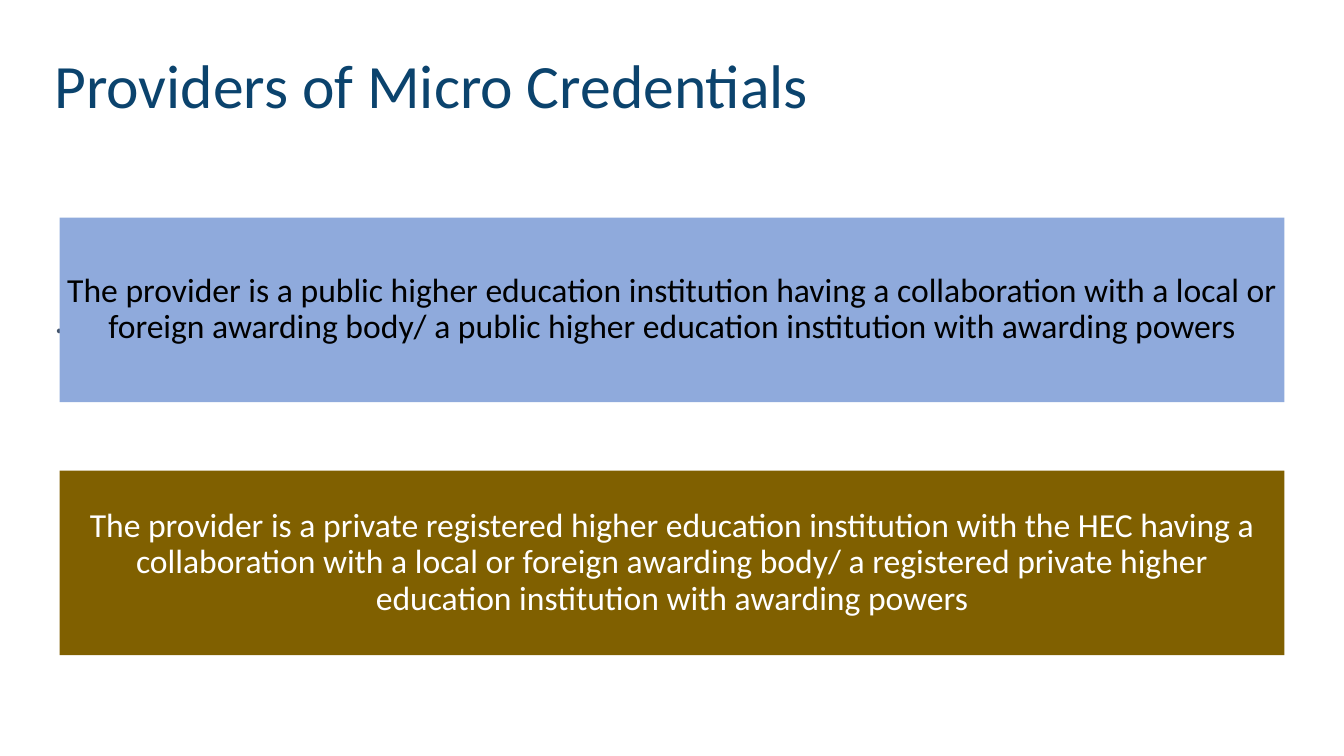
import pptx
import pptx.util
import pptx.dml.color
import pptx.enum.shapes
import pptx.enum.text

Inches = pptx.util.Inches
RGBColor = pptx.dml.color.RGBColor
ALIGN = pptx.enum.text.PP_ALIGN
ANCHOR = pptx.enum.text.MSO_ANCHOR

NAVY = RGBColor(0x0B, 0x43, 0x6D)
SLATE = RGBColor(0x44, 0x54, 0x6A)
LIGHT_BLUE = RGBColor(0x8F, 0xAA, 0xDC)
BROWN = RGBColor(0x80, 0x60, 0x00)
BLACK = RGBColor(0, 0, 0)
WHITE = RGBColor(0xFF, 0xFF, 0xFF)

PROVIDERS = [
    ("The provider is a public higher education institution having a collaboration "
     "with a local or foreign awarding body/ a public higher education institution "
     "with awarding powers", LIGHT_BLUE, BLACK),
    ("The provider is a private registered higher education institution with the HEC "
     "having a collaboration with a local or foreign awarding body/ a registered "
     "private higher education institution with awarding powers", BROWN, WHITE),
]
BAR_TOP = 2.16
BAR_STEP = 2.51


def write_text(shape, text, *, size, color, align=ALIGN.LEFT, anchor=ANCHOR.TOP):
    frame = shape.text_frame
    frame.word_wrap = True
    frame.vertical_anchor = anchor
    paragraph = frame.paragraphs[0]
    paragraph.text = text
    paragraph.alignment = align
    paragraph.line_spacing = 0.9
    font = paragraph.runs[0].font
    font.name = "Calibri"
    font.size = pptx.util.Pt(size)
    font.color.rgb = color


def add_text(slide, text, left, top, width, height, **text_format):
    box = slide.shapes.add_textbox(
        Inches(left), Inches(top), Inches(width), Inches(height))
    write_text(box, text, **text_format)


def add_provider_bar(slide, text, top, fill, color):
    bar = slide.shapes.add_shape(
        pptx.enum.shapes.MSO_SHAPE.RECTANGLE,
        Inches(0.59), Inches(top), Inches(12.15), Inches(1.83))
    bar.shadow.inherit = False
    bar.fill.solid()
    bar.fill.fore_color.rgb = fill
    bar.line.fill.background()
    frame = bar.text_frame
    frame.margin_left = frame.margin_right = Inches(0.07)
    frame.margin_top = frame.margin_bottom = Inches(0.07)
    write_text(bar, text, size=24, color=color, align=ALIGN.CENTER, anchor=ANCHOR.MIDDLE)


def main():
    presentation = pptx.Presentation()
    presentation.slide_width = Inches(13.33)
    presentation.slide_height = Inches(7.5)
    slide = presentation.slides.add_slide(presentation.slide_layouts[6])

    add_text(slide, "Providers of Micro Credentials", 0.44, 0.15, 11.5, 1.45,
             size=44, color=NAVY, anchor=ANCHOR.MIDDLE)
    add_text(slide, ".", 0.44, 2.92, 12.44, 3.59, size=28, color=SLATE)
    for index, (text, fill, color) in enumerate(PROVIDERS):
        add_provider_bar(slide, text, BAR_TOP + index * BAR_STEP, fill, color)

    presentation.save("out.pptx")


if __name__ == "__main__":
    main()
